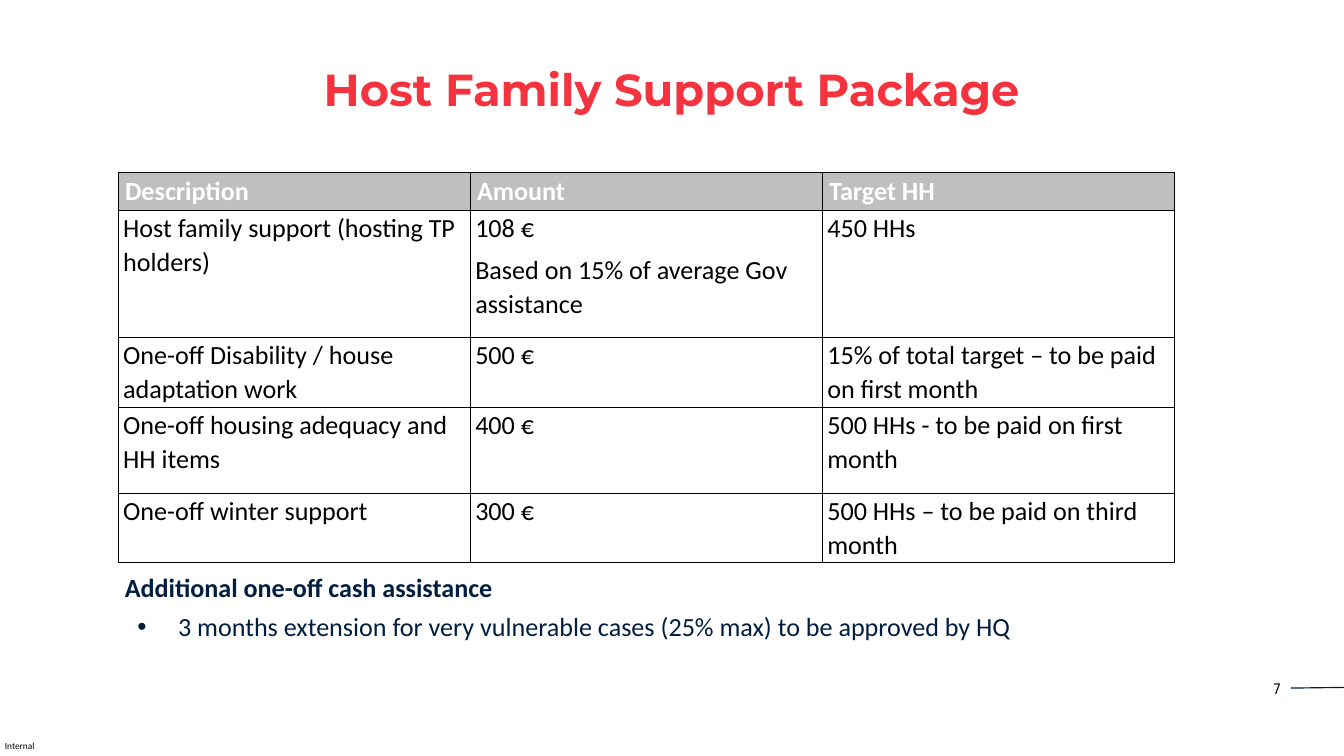
from lxml.etree import SubElement
from pptx import Presentation
from pptx.dml.color import RGBColor
from pptx.enum.shapes import MSO_CONNECTOR
from pptx.enum.text import PP_ALIGN
from pptx.oxml.ns import qn
from pptx.util import Pt

PX = 9525  # EMU per px, slide is 1920 x 1080 px
RED = RGBColor(0xF5, 0x33, 0x3F)
NAVY = RGBColor(0x01, 0x1E, 0x41)
LINE_NAVY = RGBColor(0x00, 0x1D, 0x41)
GREY = RGBColor(0xBF, 0xBF, 0xBF)
WHITE = RGBColor(0xFF, 0xFF, 0xFF)
BLACK = RGBColor(0x00, 0x00, 0x00)

prs = Presentation()
prs.slide_width, prs.slide_height = 1920 * PX, 1080 * PX
s = prs.slides.add_slide(prs.slide_layouts[6])


def write(p, text, size=28, font="Calibri", color=BLACK, bold=False,
          align=PP_ALIGN.LEFT, after=0, spacing=None):
    p.alignment = align
    p.space_after = Pt(after)
    if spacing:
        p.line_spacing = spacing
    r = p.add_run()
    r.text = text
    r.font.size, r.font.name, r.font.bold = Pt(size), font, bold
    r.font.color.rgb = color


def add_box(x, y, w, h):
    tf = s.shapes.add_textbox(x * PX, y * PX, w * PX, h * PX).text_frame
    tf.word_wrap = True
    return tf


# Footer: classification, page number and line
tf = add_box(7, 1058, 45, 16)
tf.margin_left = tf.margin_right = tf.margin_top = tf.margin_bottom = 0
tf.word_wrap = False
write(tf.paragraphs[0], "Internal", size=10)

tf = add_box(1770, 966, 69, 36)
write(tf.paragraphs[0], "7", size=16, font="Roboto Condensed", align=PP_ALIGN.RIGHT)

line = s.shapes.add_connector(MSO_CONNECTOR.STRAIGHT, 1844 * PX, 983 * PX, 1920 * PX, 982 * PX)
line.line.color.rgb = LINE_NAVY
line.line.width = Pt(1.25)
SubElement(line._element.spPr, qn("a:effectLst"))

# Title
tf = add_box(186, 84, 1547, 87)
write(tf.paragraphs[0], "Host Family Support Package", size=48, font="Montserrat",
      color=RED, bold=True, align=PP_ALIGN.CENTER)

# Support table: each cell is a list of paragraphs
rows = [
    (51, ["Description"], ["Amount"], ["Target HH"]),
    (182, ["Host family support (hosting TP holders)"],
     ["108 €", "Based on 15% of average Gov assistance"], ["450 HHs"]),
    (99, ["One-off Disability / house adaptation work"], ["500 €"],
     ["15% of total target – to be paid on first month"]),
    (123, ["One-off housing adequacy and HH items"], ["400 €"],
     ["500 HHs - to be paid on first month"]),
    (99, ["One-off winter support"], ["300 €"],
     ["500 HHs – to be paid on third month"]),
]
height = sum(row[0] for row in rows)
table = s.shapes.add_table(len(rows), 3, 169 * PX, 246 * PX, 1509 * PX, height * PX).table
table.first_row = table.horz_banding = False
for col in table.columns:
    col.width = 503 * PX

for i, (row_height, *texts) in enumerate(rows):
    table.rows[i].height = row_height * PX
    for j, paragraphs in enumerate(texts):
        cell = table.cell(i, j)
        tcPr = cell._tc.get_or_add_tcPr()
        for side in ("lnL", "lnR", "lnT", "lnB"):
            ln = SubElement(tcPr, qn(f"a:{side}"), w="12700")
            fill = SubElement(ln, qn("a:solidFill"))
            SubElement(fill, qn("a:srgbClr"), val=str(BLACK))
        if i == 0:
            cell.fill.solid()
            cell.fill.fore_color.rgb = GREY
            style = dict(color=WHITE, bold=True)
        else:
            cell.fill.background()
            cell.margin_left = cell.margin_right = 7 * PX
            cell.margin_top = cell.margin_bottom = 0
            style = dict(after=8, spacing=1.07)
        tf = cell.text_frame
        for k, text in enumerate(paragraphs):
            p = tf.add_paragraph() if k else tf.paragraphs[0]
            write(p, text, **style)

# Additional assistance
tf = add_box(169, 811, 1565, 112)
write(tf.paragraphs[0], "Additional one-off cash assistance", color=NAVY, bold=True, after=9)
p = tf.add_paragraph()
p.level = 1
pPr = p._p.get_or_add_pPr()
pPr.set("marL", str(76 * PX))
pPr.set("indent", str(-58 * PX))
SubElement(pPr, qn("a:buFont"), typeface="Arial")
SubElement(pPr, qn("a:buChar"), char="•")
write(p, "3 months extension for very vulnerable cases (25% max) to be approved by HQ",
      color=NAVY, after=9)

prs.save("out.pptx")
